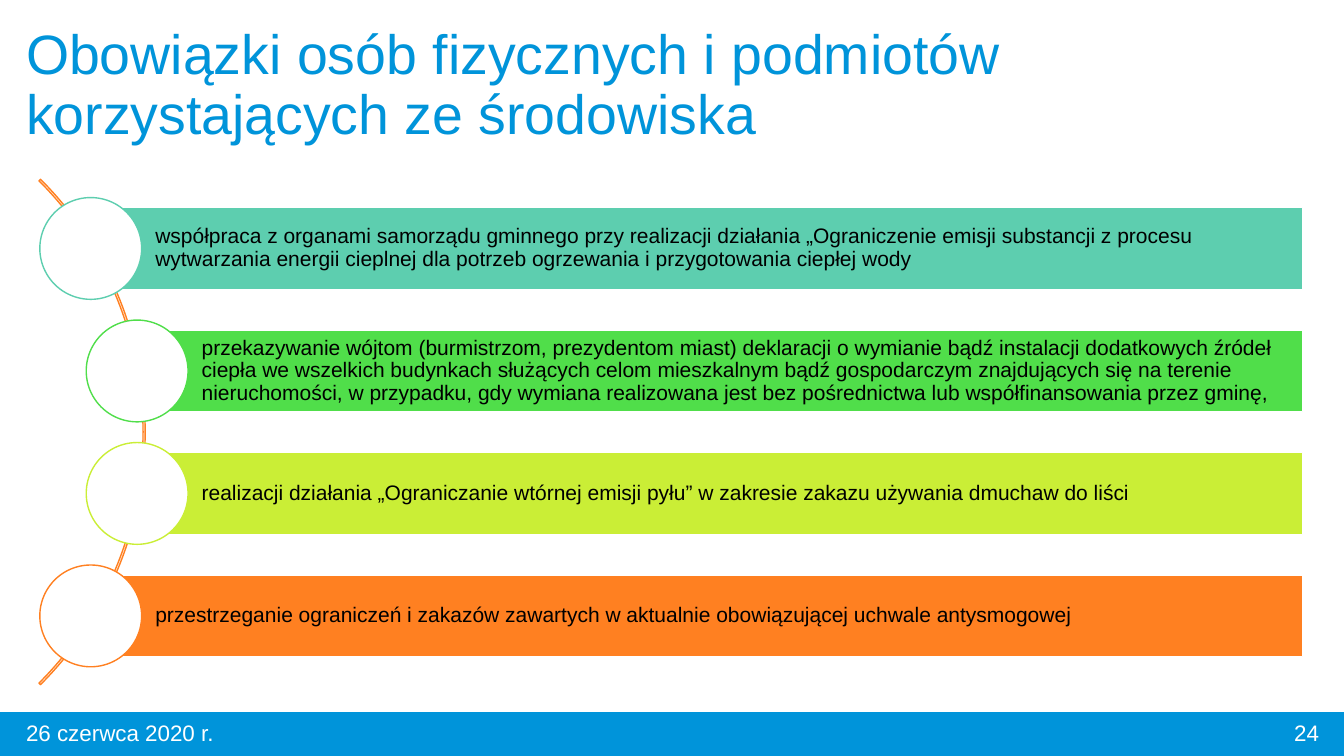
from dataclasses import dataclass

from pptx import Presentation
from pptx.dml.color import RGBColor
from pptx.enum.shapes import MSO_SHAPE
from pptx.enum.text import MSO_ANCHOR, PP_ALIGN
from pptx.util import Inches, Pt

RECTANGLE = MSO_SHAPE.RECTANGLE
OVAL = MSO_SHAPE.OVAL
BLOCK_ARC = MSO_SHAPE.BLOCK_ARC
MIDDLE = MSO_ANCHOR.MIDDLE
LEFT = PP_ALIGN.LEFT
RIGHT = PP_ALIGN.RIGHT


@dataclass
class Theme:
    font: str = "Arial"
    blue: str = "0094DA"
    white: str = "FFFFFF"
    black: str = "000000"
    teal: str = "5DCEAF"
    green: str = "50DE4A"
    lime: str = "CAEE36"
    orange: str = "FF8021"
    title_size: float = 39.6
    body_size: float = 15
    footer_size: float = 16


theme = Theme()


def write_text(text, *, shape, size, color, align=LEFT, spacing=1.0, insets=(0.1, 0.05, 0.1, 0.05)):
    frame = shape.text_frame
    frame.word_wrap = True
    frame.vertical_anchor = MIDDLE
    frame.margin_left, frame.margin_top, frame.margin_right, frame.margin_bottom = map(Inches, insets)
    paragraph = frame.paragraphs[0]
    paragraph.alignment = align
    paragraph.line_spacing = spacing
    run = paragraph.add_run()
    run.text = text
    run.font.name = theme.font
    run.font.size = Pt(size)
    run.font.color.rgb = RGBColor.from_string(color)


def add_outlined(kind, box, *, fill, line):
    shape = slide.shapes.add_shape(kind, *map(Inches, box))
    shape.shadow.inherit = False
    if fill:
        shape.fill.solid()
        shape.fill.fore_color.rgb = RGBColor.from_string(fill)
    else:
        shape.fill.background()
    shape.line.color.rgb = RGBColor.from_string(line)
    shape.line.width = Pt(1)
    return shape


presentation = Presentation()
presentation.slide_width = Inches(13.33)
presentation.slide_height = Inches(7.5)
slide = presentation.slides.add_slide(presentation.slide_layouts[6])

add_outlined(RECTANGLE, (0, 7.07, 13.33, 0.43), fill=theme.blue, line=theme.blue)

title = slide.shapes.add_textbox(Inches(0.16), Inches(0.22), Inches(10.3), Inches(1.27))
write_text(
    "Obowiązki osób fizycznych i podmiotów korzystających ze środowiska",
    shape=title, size=theme.title_size, color=theme.blue, spacing=0.9,
)

arc = add_outlined(BLOCK_ARC, (-5.65, 0.74, 7.09, 7.09), fill=None, line=theme.orange)
for index, value in enumerate((189, 27, 0.003)):
    arc.adjustments[index] = value

duties = [
    (0.9, theme.teal, "współpraca z organami samorządu gminnego przy realizacji działania „Ograniczenie emisji substancji z procesu wytwarzania energii cieplnej dla potrzeb ogrzewania i przygotowania ciepłej wody"),
    (1.36, theme.green, "przekazywanie wójtom (burmistrzom, prezydentom miast) deklaracji o wymianie bądź instalacji dodatkowych źródeł ciepła we wszelkich budynkach służących celom mieszkalnym bądź gospodarczym znajdujących się na terenie nieruchomości, w przypadku, gdy wymiana realizowana jest bez pośrednictwa lub współfinansowania przez gminę,"),
    (1.36, theme.lime, "realizacji działania „Ograniczanie wtórnej emisji pyłu” w zakresie zakazu używania dmuchaw do liści"),
    (0.9, theme.orange, "przestrzeganie ograniczeń i zakazów zawartych w aktualnie obowiązującej uchwale antysmogowej"),
]
bar_right = 12.92
bar_height = 0.81
circle_size = 1.01
first_top = 2.06
row_step = 1.215

for row, (left, color, text) in enumerate(duties):
    top = first_top + row * row_step
    bar = add_outlined(RECTANGLE, (left, top, bar_right - left, bar_height), fill=color, line=theme.white)
    write_text(
        text, shape=bar, size=theme.body_size, color=theme.black,
        spacing=0.9, insets=(0.64, 0.04, 0.04, 0.04),
    )
    circle_left = left - circle_size / 2
    circle_top = top + (bar_height - circle_size) / 2
    add_outlined(OVAL, (circle_left, circle_top, circle_size, circle_size), fill=theme.white, line=color)

footers = [
    (0.16, 4, LEFT, "26 czerwca 2020 r."),
    (10.18, 3, RIGHT, "24"),
]
for left, width, align, text in footers:
    footer = slide.shapes.add_textbox(Inches(left), Inches(7.07), Inches(width), Inches(0.4))
    write_text(text, shape=footer, size=theme.footer_size, color=theme.white, align=align)

presentation.save("out.pptx")
